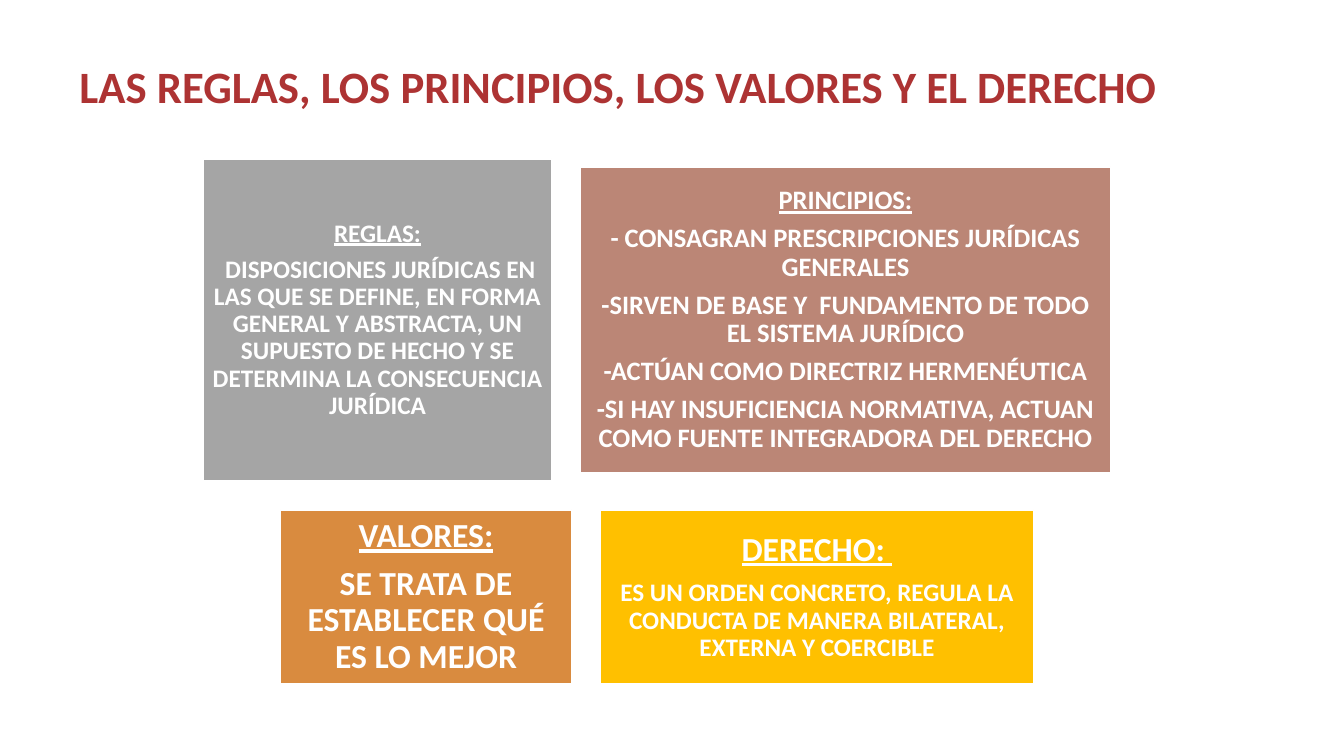
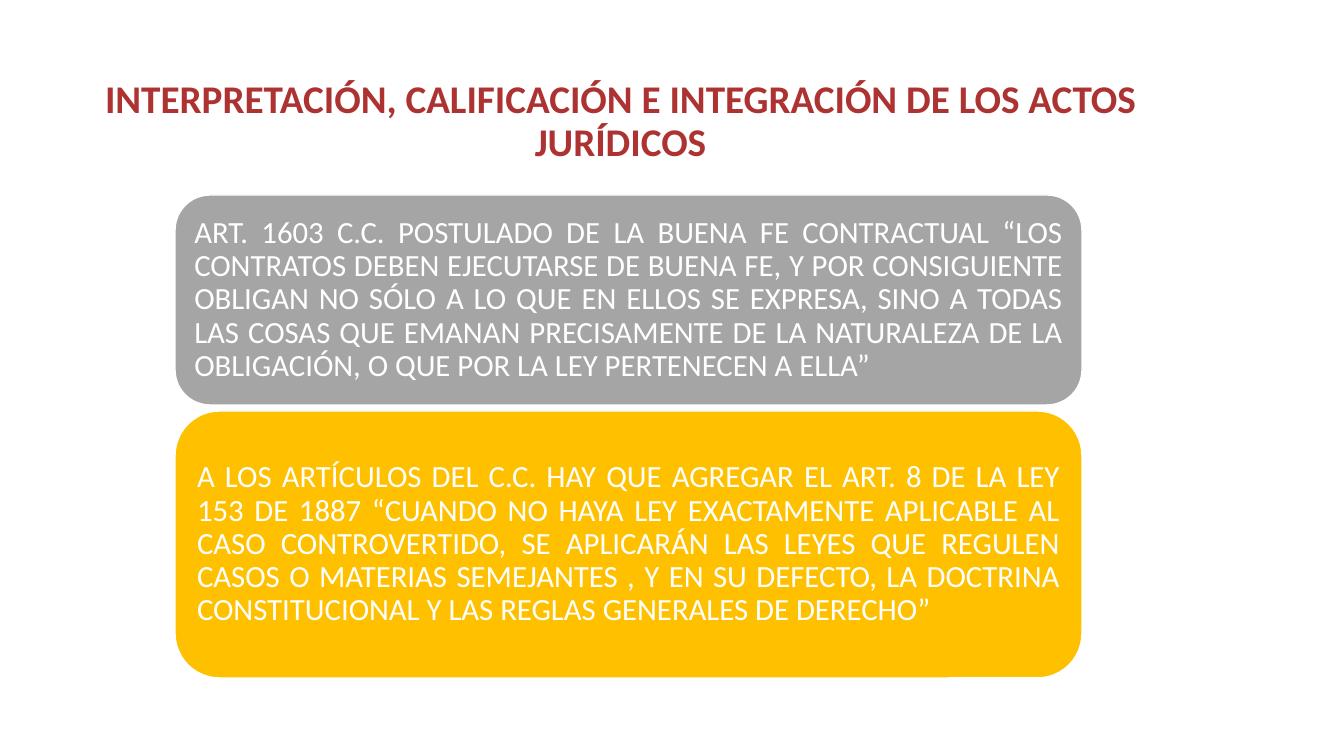
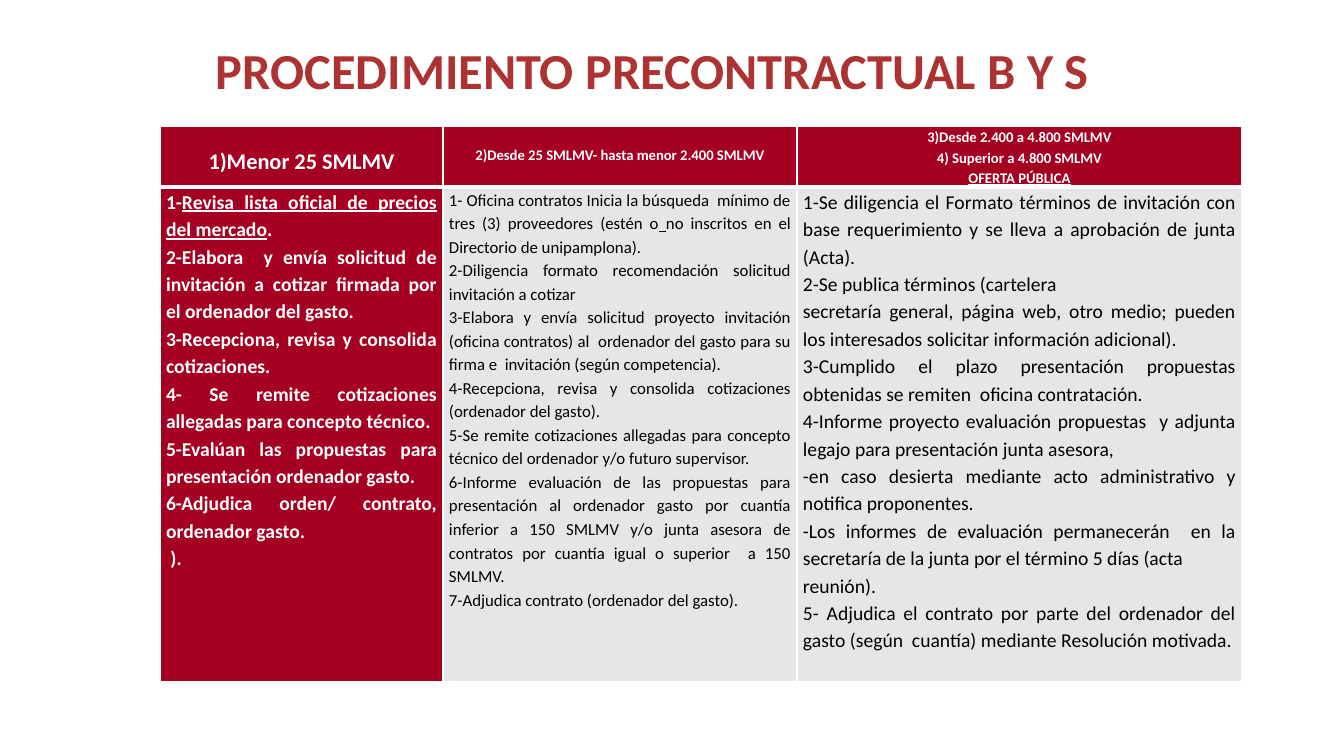
from dataclasses import dataclass, replace

from lxml.etree import SubElement
from pptx import Presentation
from pptx.dml.color import RGBColor
from pptx.enum.shapes import MSO_SHAPE
from pptx.enum.text import MSO_ANCHOR, PP_ALIGN
from pptx.oxml.ns import qn
from pptx.util import Emu, Pt


@dataclass(frozen=True)
class Theme:
    font: str = "Calibri"
    white: str = "FFFFFF"
    black: str = "000000"
    title: str = "AD3333"
    gray: str = "A5A5A5"
    clay: str = "BB8676"
    orange: str = "D98B3F"
    gold: str = "FFC000"
    wine: str = "A50021"
    pale: str = "E7E6E6"
    small: float = 10.5
    note: int = 12
    cell: int = 14
    head: int = 16
    body: int = 18
    wide: int = 19
    quote: int = 22
    large: int = 24


@dataclass(frozen=True)
class Look:
    """Text format; after is the space below, as a share of the type size."""
    size: float
    color: str = Theme.white
    bold: bool = True
    align: PP_ALIGN = PP_ALIGN.CENTER
    line: float = 0.9
    after: float = 0
    first: float = 0


THEME = Theme()
SCALE = 914400 / 100.8
WIDTH, HEIGHT = 1344, 756
GAP = 29
MIDDLE = 657


def px(count):
    return Emu(round(count * SCALE))


def rgb(code):
    return RGBColor.from_string(code)


def apply(item, **values):
    for name, value in values.items():
        setattr(item, name, value)


def pad(item, side, top, low):
    apply(item, margin_left=px(side), margin_right=px(side),
          margin_top=px(top), margin_bottom=px(low))


def write(frame, lines, look):
    """Fill a frame with paragraphs; text between underscores is underlined."""
    for index, text in enumerate(lines):
        para = frame.add_paragraph() if index else frame.paragraphs[0]
        size = look.size if index or not look.first else look.first
        apply(para, alignment=look.align, line_spacing=look.line,
              space_before=Pt(0), space_after=Pt(round(size * look.after, 1)))
        for turn, piece in enumerate(text.split("_")):
            if piece:
                run = para.add_run()
                run.text = piece
                apply(run.font, name=THEME.font, size=Pt(size),
                      bold=look.bold, underline=turn % 2 == 1)
                run.font.color.rgb = rgb(look.color)


def title(slide, text, size, left, top, height, anchor=MSO_ANCHOR.MIDDLE):
    box = slide.shapes.add_textbox(px(left), px(top), px(1159), px(height))
    apply(box.text_frame, word_wrap=True, vertical_anchor=anchor)
    write(box.text_frame, [text], Look(size, THEME.title))


def panel(slide, kind, place, fill, inset, lines, look):
    shape = slide.shapes.add_shape(kind, *map(px, place))
    shape.shadow.inherit = False
    shape.fill.solid()
    shape.fill.fore_color.rgb = rgb(fill)
    shape.line.color.rgb = rgb(THEME.white)
    shape.line.width = Pt(1)
    frame = shape.text_frame
    apply(frame, word_wrap=True, vertical_anchor=MSO_ANCHOR.MIDDLE)
    pad(frame, inset, inset, inset)
    write(frame, lines, look)


def band(slide, center, panels):
    """Place panels side by side, centred on one point."""
    left = MIDDLE - (sum(item[0] for item in panels) + GAP * (len(panels) - 1)) / 2
    for width, height, *rest in panels:
        place = (left, center - height / 2, width, height)
        panel(slide, MSO_SHAPE.RECTANGLE, place, *rest)
        left += width + GAP


def edge(cell, widths):
    props = cell._tc.get_or_add_tcPr()
    for side, width in widths.items():
        line = SubElement(props, qn(f"a:ln{side}"), w=str(Pt(width)))
        fill = SubElement(line, qn("a:solidFill"))
        SubElement(fill, qn("a:srgbClr"), val=THEME.white)


def grid(slide, left, top, cols, rows, cells):
    """Build a table from rows of (lines, look, fill, top margin)."""
    table = slide.shapes.add_table(len(rows), len(cols), px(left), px(top),
                                   px(sum(cols)), px(sum(rows))).table
    apply(table, first_row=False, horz_banding=False)
    for col, width in zip(table.columns, cols):
        col.width = px(width)
    for index, (row, height) in enumerate(zip(table.rows, rows)):
        row.height = px(height)
        for cell, (lines, look, fill, drop) in zip(row.cells, cells[index]):
            edge(cell, {"L": 1, "R": 1, "T": 3 if index else 1,
                        "B": 1 if index else 3})
            cell.fill.solid()
            cell.fill.fore_color.rgb = rgb(fill)
            pad(cell, 6, drop, 0)
            write(cell.text_frame, lines, look)


def rules(slide):
    title(slide, "LAS REGLAS, LOS PRINCIPIOS, LOS VALORES Y EL DERECHO",
          32, 39, 34, 109)
    look = Look(THEME.body, after=0.35)
    band(slide, 320, [
        (348, 322, THEME.gray, 7, [
            "_REGLAS:_",
            " DISPOSICIONES JURÍDICAS EN LAS QUE SE DEFINE, EN FORMA GENERAL Y "
            "ABSTRACTA, UN SUPUESTO DE HECHO Y SE DETERMINA LA CONSECUENCIA JURÍDICA",
        ], look),
        (530, 306, THEME.clay, 8, [
            "_PRINCIPIOS:_",
            "- CONSAGRAN PRESCRIPCIONES JURÍDICAS GENERALES",
            "-SIRVEN DE BASE Y  FUNDAMENTO DE TODO EL SISTEMA JURÍDICO",
            "-ACTÚAN COMO DIRECTRIZ HERMENÉUTICA",
            "-SI HAY INSUFICIENCIA NORMATIVA, ACTUAN COMO FUENTE INTEGRADORA DEL DERECHO",
        ], replace(look, size=THEME.wide)),
    ])
    band(slide, 597, [
        (291, 174, THEME.orange, 10, [
            "_VALORES:_",
            "SE TRATA DE ESTABLECER QUÉ ES LO MEJOR",
        ], replace(look, size=THEME.large)),
        (433, 174, THEME.gold, 10, [
            "_DERECHO: _",
            "ES UN ORDEN CONCRETO, REGULA LA CONDUCTA DE MANERA BILATERAL, "
            "EXTERNA Y COERCIBLE",
        ], replace(look, first=THEME.large)),
    ])


def acts(slide):
    title(slide, "INTERPRETACIÓN, CALIFICACIÓN E INTEGRACIÓN DE LOS ACTOS JURÍDICOS",
          28, 41, 75, 109, MSO_ANCHOR.TOP)
    look = Look(THEME.quote, bold=False, align=PP_ALIGN.JUSTIFY)
    top = 195
    for height, fill, text in (
        (210, THEME.gray,
         "ART. 1603 C.C. POSTULADO DE LA BUENA FE CONTRACTUAL “LOS CONTRATOS DEBEN "
         "EJECUTARSE DE BUENA FE, Y POR CONSIGUIENTE OBLIGAN NO SÓLO A LO QUE EN ELLOS "
         "SE EXPRESA, SINO A TODAS LAS COSAS QUE EMANAN PRECISAMENTE DE LA NATURALEZA "
         "DE LA OBLIGACIÓN, O QUE POR LA LEY PERTENECEN A ELLA”"),
        (267, THEME.gold,
         "A LOS ARTÍCULOS DEL C.C. HAY QUE AGREGAR EL ART. 8 DE LA LEY 153 DE 1887 "
         "“CUANDO NO HAYA LEY EXACTAMENTE APLICABLE AL CASO CONTROVERTIDO, SE "
         "APLICARÁN LAS LEYES QUE REGULEN CASOS O MATERIAS SEMEJANTES , Y EN SU "
         "DEFECTO, LA DOCTRINA CONSTITUCIONAL Y LAS REGLAS GENERALES DE DERECHO”"),
    ):
        panel(slide, MSO_SHAPE.ROUNDED_RECTANGLE, (175, top, 907, height),
              fill, 9, [text], look)
        top += height + 6


def steps(slide):
    title(slide, "PROCEDIMIENTO PRECONTRACTUAL B Y S", 36, 73, 25, 97)
    head = Look(THEME.small, line=1.15)
    body = replace(head, size=THEME.cell, align=PP_ALIGN.JUSTIFY)
    plain = replace(body, color=THEME.black, bold=False)
    heads = [
        (["1)Menor 25 SMLMV"], replace(head, size=THEME.head), THEME.wine, 18),
        (["2)Desde 25 SMLMV- hasta menor 2.400 SMLMV"], head, THEME.wine, 18),
        (["3)Desde 2.400 a 4.800 SMLMV", "4) Superior a 4.800 SMLMV",
          "_OFERTA PÚBLICA_"], head, THEME.wine, 0),
    ]
    minor = [
        "1-_Revisa lista oficial de precios del mercado_.",
        "2-Elabora  y envía solicitud de invitación a cotizar firmada por el "
        "ordenador del gasto.",
        "3-Recepciona, revisa y consolida cotizaciones.",
        "4- Se remite cotizaciones allegadas para concepto técnico.",
        "5-Evalúan las propuestas para presentación ordenador gasto.",
        "6-Adjudica orden/ contrato, ordenador gasto.",
        " ).",
    ]
    middle = [
        "1- Oficina contratos Inicia la búsqueda  mínimo de tres (3) proveedores "
        "(estén o_ _no inscritos en el Directorio de unipamplona).",
        "2-Diligencia formato recomendación solicitud invitación a cotizar",
        "3-Elabora y envía solicitud proyecto invitación (oficina contratos) al  "
        "ordenador del gasto para su firma e  invitación (según competencia).",
        "4-Recepciona, revisa y consolida cotizaciones (ordenador del gasto).",
        "5-Se remite cotizaciones allegadas para concepto técnico del ordenador "
        "y/o futuro supervisor.",
        "6-Informe evaluación de las propuestas para presentación al ordenador gasto "
        "por cuantía inferior a 150 SMLMV y/o junta asesora de contratos por cuantía "
        "igual o superior  a 150 SMLMV.",
        "7-Adjudica contrato (ordenador del gasto).",
    ]
    major = [
        "1-Se diligencia el Formato términos de invitación con base requerimiento y "
        "se lleva a aprobación de junta (Acta).",
        "2-Se publica términos (cartelera",
        "secretaría general, página web, otro medio; pueden los interesados solicitar "
        "información adicional).",
        "3-Cumplido el plazo presentación propuestas obtenidas se remiten  oficina "
        "contratación.",
        "4-Informe proyecto evaluación propuestas  y adjunta legajo para presentación "
        "junta asesora,",
        "-en caso desierta mediante acto administrativo y notifica proponentes.",
        "-Los informes de evaluación permanecerán  en la secretaría de la junta por "
        "el término 5 días (acta",
        "reunión).",
        "5- Adjudica el contrato por parte del ordenador del gasto (según  cuantía) "
        "mediante Resolución motivada.",
    ]
    grid(slide, 160, 126, (283, 354, 445), (61, 495), [heads, [
        (minor, body, THEME.wine, 0),
        (middle, replace(plain, size=THEME.note), THEME.pale, 0),
        (major, plain, THEME.pale, 0),
    ]])


def main():
    deck = Presentation()
    apply(deck, slide_width=px(WIDTH), slide_height=px(HEIGHT))
    for build in (rules, acts, steps):
        build(deck.slides.add_slide(deck.slide_layouts[6]))
    deck.save("out.pptx")


if __name__ == "__main__":
    main()
